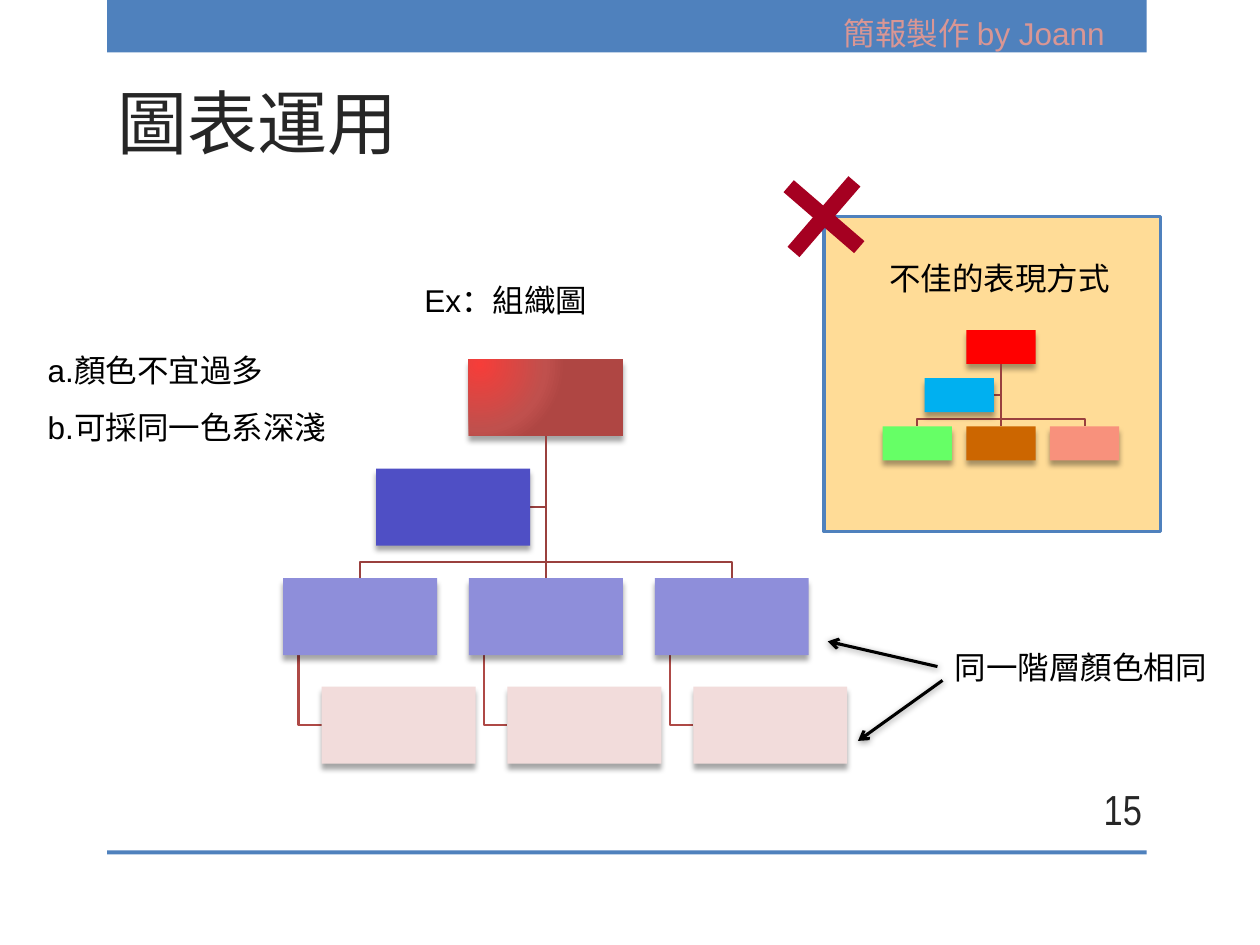
"""Build a slide on good and poor use of colour in organisation charts."""
from lxml import etree
from pptx import Presentation, util as u
from pptx.dml.color import RGBColor
from pptx.enum import shapes, text
from pptx.oxml import parse_xml
from pptx.oxml.ns import nsdecls, qn

BLUE, INK, BLACK = "4F81BD", "262626", "000000"
WIRE, TWIG = "9A403E", "AE4946"
TITLE = ("圖表運用", (60, 41, 284, 57), 40, "Arial Narrow", INK)
BANDS = [(61.2, 0, 594, 30), (61.2, 486, 594, 2.2)]
NOTES = [
    (["簡報製作 by Joann"], (475.2, 4.3, 180, 29), 18, "Arial", "D99694"),
    (["15"], (599.8, 447.8, 59.8, 29), 24, "Arial Narrow", INK),
    (["同一階層顏色相同"], (538.6, 366.5, 162, 29), 18, "Arial", BLACK),
    (["a.顏色不宜過多", "b.可採同一色系深淺"], (20.2, 186.5, 186, 73), 18, "Arial", BLACK),
    (["Ex：組織圖"], (235.4, 157, 148, 29), 18, "Arial", BLACK),
]
ARROWS = [((535.7, 380.9), (473, 366.5)), ((538.6, 388.8), (490.3, 423.4))]
PANEL = (470.9, 123.8, 192.2, 180)
CROSS = (444.2, 97.2, 53.3, 53.3)
CAPTION = (["不佳的表現方式"], (501.1, 144.7, 142.6, 29), 18, "Arial", BLACK)
GOOD = dict(at=(268, 205.2), scale=(1, 1), root="C0504D", aide="4F4FC5",
            row=["8E8EDA"] * 3, leaf="F2DCDB")
POOR = dict(at=(552.2, 188.6), scale=(0.45, 0.44), root="FF0000", aide="00B0F0",
            row=["66FF66", "CC6600", "F8917C"], leaf=None)
GLOW = [(0, "F63D39"), (76, "C0504D"), (100, "AF4643")]
WIDE, HIGH, PITCH = 88, 44, 106.2


def rgb(code):
    return RGBColor.from_string(code)


def pts(nums):
    return [u.Pt(n) for n in nums]


def shade(item, alpha, blur, dist, angle):
    """Give a shape or connector a soft outer shadow."""
    prop = item._element.spPr
    for old in prop.findall(qn("a:effectLst")):
        prop.remove(old)
    prop.append(parse_xml(
        f'<a:effectLst {nsdecls("a")}><a:outerShdw blurRad="{u.Pt(blur)}" dist="{u.Pt(dist)}" '
        f'dir="{angle * 60000}" rotWithShape="0"><a:srgbClr val="{BLACK}">'
        f'<a:alpha val="{alpha * 1000}"/></a:srgbClr></a:outerShdw></a:effectLst>'))


def block(page, area, fill, kind=shapes.MSO_SHAPE.RECTANGLE):
    item = page.shapes.add_shape(kind, *pts(area))
    item.shadow.inherit = False
    item.fill.solid()
    item.fill.fore_color.rgb = rgb(fill)
    item.line.fill.background()
    return item


def style(item, size, font, color):
    for para in item.text_frame.paragraphs:
        for run in para.runs:
            run.font.size, run.font.name = u.Pt(size), font
            run.font.color.rgb = rgb(color)


def note(page, lines, area, size, font, color):
    item = page.shapes.add_textbox(*pts(area))
    item.text_frame.word_wrap = True
    item.text_frame.text = "\n".join(lines)
    for para in item.text_frame.paragraphs:
        para.line_spacing = 1.5 if len(lines) > 1 else 1
    style(item, size, font, color)
    return item


def wire(page, dots, color):
    """Draw an open bent line through the dots."""
    dots = [pts(dot) for dot in dots]
    path = page.shapes.build_freeform(*dots[0], scale=1.0)
    path.add_line_segments(dots[1:], close=False)
    item = path.convert_to_shape()
    item.shadow.inherit = False
    item.fill.background()
    item.line.color.rgb, item.line.width = rgb(color), u.Pt(1.25)


def line(page, start, end, color, width):
    item = page.shapes.add_connector(shapes.MSO_CONNECTOR.STRAIGHT, *pts(start + end))
    item.line.color.rgb, item.line.width = rgb(color), u.Pt(width)
    etree.SubElement(item._element.spPr, qn("a:effectLst"))
    return item


def glow(item):
    """Fill a shape with a radial gradient from its upper left."""
    stops = "".join(f'<a:gs pos="{pos * 1000}"><a:srgbClr val="{code}"/></a:gs>'
                    for pos, code in GLOW)
    prop = item._element.spPr
    prop.replace(prop.find(qn("a:solidFill")), parse_xml(
        f'<a:gradFill {nsdecls("a")} rotWithShape="1"><a:gsLst>{stops}</a:gsLst>'
        '<a:path path="circle"><a:fillToRect l="15000" t="15000" r="100000" b="100000"/>'
        '</a:path></a:gradFill>'))


def chart(page, at, scale, root, aide, row, leaf):
    """Draw an organisation chart, laid out from its root box."""
    def spot(x, y):
        return at[0] + x * scale[0], at[1] + y * scale[1]

    def box(x, y, fill):
        item = block(page, spot(x, y) + (WIDE * scale[0], HIGH * scale[1]), fill)
        shade(item, 35, 3, 3, 90)
        return item

    mid, top, bend, low = WIDE / 2, 125.2, 116, 187.2
    aside = (-53, 62.6)
    cols = [PITCH * (n - 1) for n in range(len(row))]
    level = aside[1] + HIGH / 2
    wire(page, [spot(mid, HIGH), spot(mid, level), spot(aside[0] + WIDE, level)], WIRE)
    for x in cols:
        if x:
            wire(page, [spot(mid, HIGH), spot(mid, bend), spot(x + mid, bend),
                        spot(x + mid, top)], WIRE)
        if leaf:
            foot = low + HIGH / 2
            wire(page, [spot(x + 8.8, top + HIGH), spot(x + 8.8, foot),
                        spot(x + 22, foot)], TWIG)
    head = box(0, 0, root)
    kids = [box(x, top, fill) for x, fill in zip(cols, row)]
    if leaf:
        for x in cols:
            box(x + 22, low, leaf)
    box(*aside, aide)
    stem = line(page, spot(mid, HIGH), spot(mid, top), WIRE, 1.25)
    stem.begin_connect(head, 2)
    stem.end_connect(kids[1], 0)
    return head


def main():
    deck = Presentation()
    deck.slide_width, deck.slide_height = u.Pt(720), u.Pt(540)
    page = deck.slides.add_slide(deck.slide_layouts[5])
    words, area, *look = TITLE
    title = page.shapes.title
    title.left, title.top, title.width, title.height = pts(area)
    title.text_frame.text = words
    title.text_frame.paragraphs[0].alignment = text.PP_ALIGN.LEFT
    style(title, *look)
    for band in BANDS:
        block(page, band, BLUE)
    glow(chart(page, **GOOD))
    items = [note(page, *entry) for entry in NOTES]
    items[1].text_frame.paragraphs[0].alignment = text.PP_ALIGN.RIGHT
    items[1].text_frame.vertical_anchor = text.MSO_ANCHOR.MIDDLE
    for start, end in ARROWS:
        arrow = line(page, start, end, BLACK, 1.75)
        etree.SubElement(arrow.line._get_or_add_ln(), qn("a:tailEnd"), type="arrow")
        shade(arrow, 40, 4, 1, 88)
    panel = block(page, PANEL, "FFDC97")
    panel.line.color.rgb, panel.line.width = rgb(BLUE), u.Pt(1.75)
    chart(page, **POOR)
    note(page, *CAPTION)
    cross = block(page, CROSS, "A50021", shapes.MSO_SHAPE.CROSS)
    cross.adjustments[0], cross.rotation = 0.415, 40.8
    deck.save("out.pptx")


if __name__ == "__main__":
    main()
